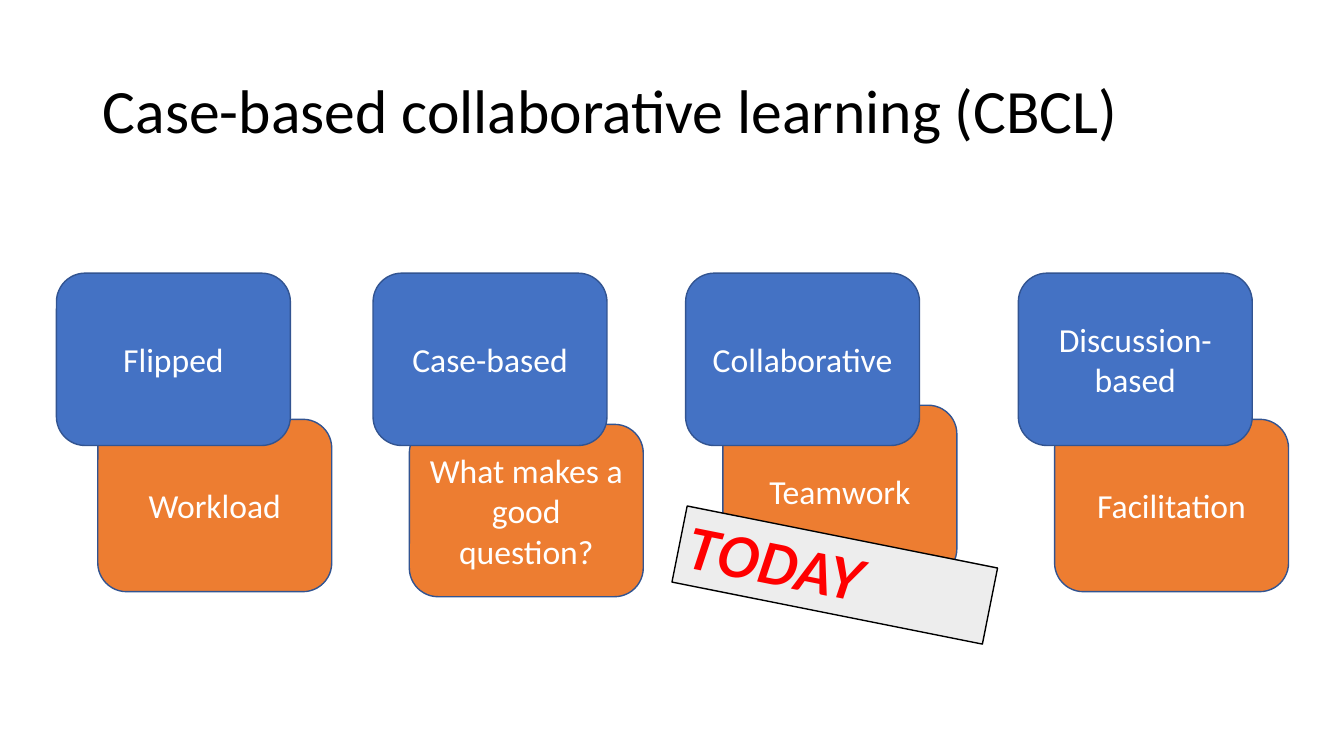
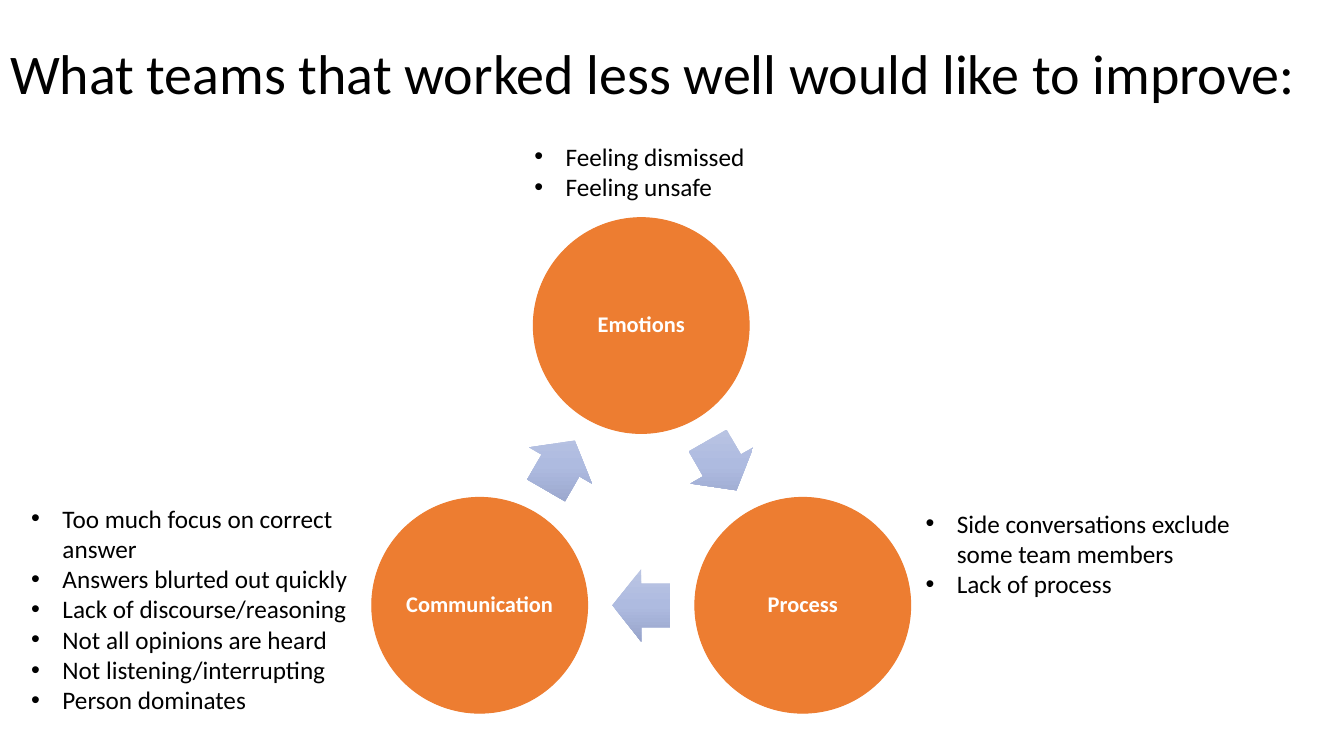
from pptx import Presentation
from pptx import util as u
from pptx.dml.color import RGBColor
from pptx.enum import shapes, text
from pptx.oxml import parse_xml
from pptx.oxml.ns import nsdecls
import math

COLOURS = {
    "black": "000000",
    "white": "FFFFFF",
    "blue": "4472C4",
    "orange": "ED7D31",
    "card edge": "325491",
    "label": "EDEDED",
    "red": "FF0000",
}
ARROW_GRADIENT = [(0, "BBC5E3"), (50, "AEBBE0"), (100, "98A4CB")]
FONT = "Calibri"
TITLE_ONLY, COMPARISON = 5, 4

CARD_SIZE = (2.32, 1.71)
CARD_TOP = 2.71
# principle, its left edge, theme, shift of the theme card (across, down)
CARDS = [
    ("Flipped", 0.56, "Workload", (0.41, 1.45)),
    ("Case-based", 3.7, "What makes a good question?", (0.36, 1.5)),
    ("Collaborative", 6.8, "Teamwork", (0.37, 1.31)),
    ("Discussion-based", 10.1, "Facilitation", (0.36, 1.45)),
]

CYCLE_CENTRE = (6.36, 5.08)
CYCLE_RADIUS = 1.85
CIRCLE = 2.14
ARROW_SIZE = (0.57, 0.72)
CYCLE = ["Emotions", "Process", "Communication"]
LISTS = [
    ((5.2, 1.35, 2.31, 0.71), ["Feeling dismissed", "Feeling unsafe"]),
    ((9.08, 4.99, 3.76, 1.01),
     ["Side conversations exclude some team members", "Lack of process"]),
    ((0.21, 4.94, 3.68, 2.22),
     ["Too much focus on correct answer", "Answers blurted out quickly",
      "Lack of discourse/reasoning", "Not all opinions are heard",
      "Not listening/interrupting", "Person dominates"]),
]


def rgb(name):
    return RGBColor.from_string(COLOURS[name])


def inches(*lengths):
    return [u.Inches(length) for length in lengths]


def place(shape, area):
    shape.left, shape.top, shape.width, shape.height = inches(*area)


def style_font(para, size, colour, bold=False, italic=False, font=FONT):
    for span in para.runs:
        span.font.name = font
        span.font.size = u.Pt(size)
        span.font.bold = bold
        span.font.italic = italic
        span.font.color.rgb = rgb(colour)


def paint(shape, fill, edge, width=1):
    shape.fill.solid()
    shape.fill.fore_color.rgb = rgb(fill)
    shape.line.color.rgb = rgb(edge)
    shape.line.width = u.Pt(width)


def add_title(slide, wording, area, size):
    title = slide.shapes.title
    place(title, area)
    frame = title.text_frame
    frame.text = wording
    frame.vertical_anchor = text.MSO_ANCHOR.MIDDLE
    frame.auto_size = text.MSO_AUTO_SIZE.NONE
    para = frame.paragraphs[0]
    para.alignment = text.PP_ALIGN.LEFT
    para.line_spacing = 0.9
    style_font(para, size, "black")


def add_labelled_shape(slide, kind, area, wording, size, bold=False):
    """Add a shape with white text in its middle."""
    shape = slide.shapes.add_shape(kind, *inches(*area))
    shape.shadow.inherit = False
    frame = shape.text_frame
    frame.text = wording
    frame.word_wrap = True
    frame.vertical_anchor = text.MSO_ANCHOR.MIDDLE
    para = frame.paragraphs[0]
    para.alignment = text.PP_ALIGN.CENTER
    style_font(para, size, "white", bold)
    return shape


def add_card(slide, left, top, wording, fill):
    card = add_labelled_shape(slide, shapes.MSO_SHAPE.ROUNDED_RECTANGLE,
                              (left, top, *CARD_SIZE), wording, 24)
    paint(card, fill, "card edge")


def add_sticker(slide, wording, area, rotation):
    sticker = slide.shapes.add_textbox(*inches(*area))
    sticker.rotation = rotation
    paint(sticker, "label", "black")
    frame = sticker.text_frame
    frame.text = wording
    frame.word_wrap = False
    frame.auto_size = text.MSO_AUTO_SIZE.SHAPE_TO_FIT_TEXT
    para = frame.paragraphs[0]
    style_font(para, 40, "red", bold=True, italic=True, font="Lato")
    outline = parse_xml(
        f'<a:ln {nsdecls("a")} w="{u.Pt(0.75)}"><a:solidFill>'
        f'<a:srgbClr val="{COLOURS["white"]}"/></a:solidFill></a:ln>')
    para.runs[0].font._element.insert(0, outline)


def fill_list(holder, area, items):
    place(holder, area)
    frame = holder.text_frame
    frame.text = "\n".join(items)
    frame.vertical_anchor = text.MSO_ANCHOR.TOP
    frame.auto_size = text.MSO_AUTO_SIZE.NONE
    for para in frame.paragraphs:
        para.space_before = u.Pt(0)
        style_font(para, 18, "black")
        props = para._p.get_or_add_pPr()
        props.set("marL", str(u.Inches(0.31)))
        props.set("indent", str(u.Inches(-0.31)))
        props.append(parse_xml(f'<a:buFont {nsdecls("a")} typeface="Arial"/>'))
        props.append(parse_xml(f'<a:buChar {nsdecls("a")} char="•"/>'))


def cycle_point(angle, radius):
    """Point on the cycle, with the angle in degrees clockwise from the top."""
    turn = math.radians(angle)
    return (CYCLE_CENTRE[0] + radius * math.sin(turn),
            CYCLE_CENTRE[1] - radius * math.cos(turn))


def centred(point, width, height):
    return point[0] - width / 2, point[1] - height / 2, width, height


def add_circle(slide, point, wording):
    circle = add_labelled_shape(slide, shapes.MSO_SHAPE.OVAL,
                                centred(point, CIRCLE, CIRCLE), wording, 16, True)
    paint(circle, "orange", "orange", 0.75)
    frame = circle.text_frame
    frame.margin_left = frame.margin_right = u.Inches(0.02)
    frame.margin_top = frame.margin_bottom = u.Inches(0.02)
    frame.paragraphs[0].line_spacing = 0.9


def add_cycle_arrow(slide, point, rotation):
    arrow = slide.shapes.add_shape(shapes.MSO_SHAPE.RIGHT_ARROW,
                                   *inches(*centred(point, *ARROW_SIZE)))
    arrow.rotation = rotation
    arrow.adjustments[0], arrow.adjustments[1] = 0.6, 0.5
    arrow.shadow.inherit = False
    arrow.line.fill.background()
    stops = "".join(f'<a:gs pos="{share * 1000}"><a:srgbClr val="{colour}"/></a:gs>'
                    for share, colour in ARROW_GRADIENT)
    gradient = parse_xml(
        f'<a:gradFill {nsdecls("a")} rotWithShape="0"><a:gsLst>{stops}</a:gsLst>'
        '<a:lin ang="5400000" scaled="0"/></a:gradFill>')
    arrow._element.spPr.find("{*}prstGeom").addnext(gradient)


def build_principles(deck):
    slide = deck.slides.add_slide(deck.slide_layouts[TITLE_ONLY])
    add_title(slide, "Case-based collaborative learning (CBCL)",
              (0.92, 0.4, 11.5, 1.45), 44)
    for principle, left, theme, (across, down) in CARDS:
        add_card(slide, left + across, CARD_TOP + down, theme, "orange")
        add_card(slide, left, CARD_TOP, principle, "blue")
    add_sticker(slide, "TODAY", (6.71, 5.32, 3.14, 0.77), 11.3)


def build_improvements(deck):
    slide = deck.slides.add_slide(deck.slide_layouts[COMPARISON])
    add_title(slide, "What teams that worked less well would like to improve:",
              (0, 0.03, 13.33, 1.45), 40)
    holders = list(slide.placeholders)[1:]
    for holder, (area, items) in zip(holders, LISTS):
        fill_list(holder, area, items)
    for unused in holders[len(LISTS):]:
        unused._element.getparent().remove(unused._element)

    step = 360 / len(CYCLE)
    for index, wording in enumerate(CYCLE):
        angle = index * step
        add_circle(slide, cycle_point(angle, CYCLE_RADIUS), wording)
        # the middle of a side lies nearer the centre than the corners
        side = cycle_point(angle + step / 2,
                           CYCLE_RADIUS * math.cos(math.radians(step / 2)))
        add_cycle_arrow(slide, side, angle + step / 2)


def main():
    deck = Presentation()
    deck.slide_width, deck.slide_height = inches(13.33, 7.5)
    build_principles(deck)
    build_improvements(deck)
    deck.save("out.pptx")


if __name__ == "__main__":
    main()
